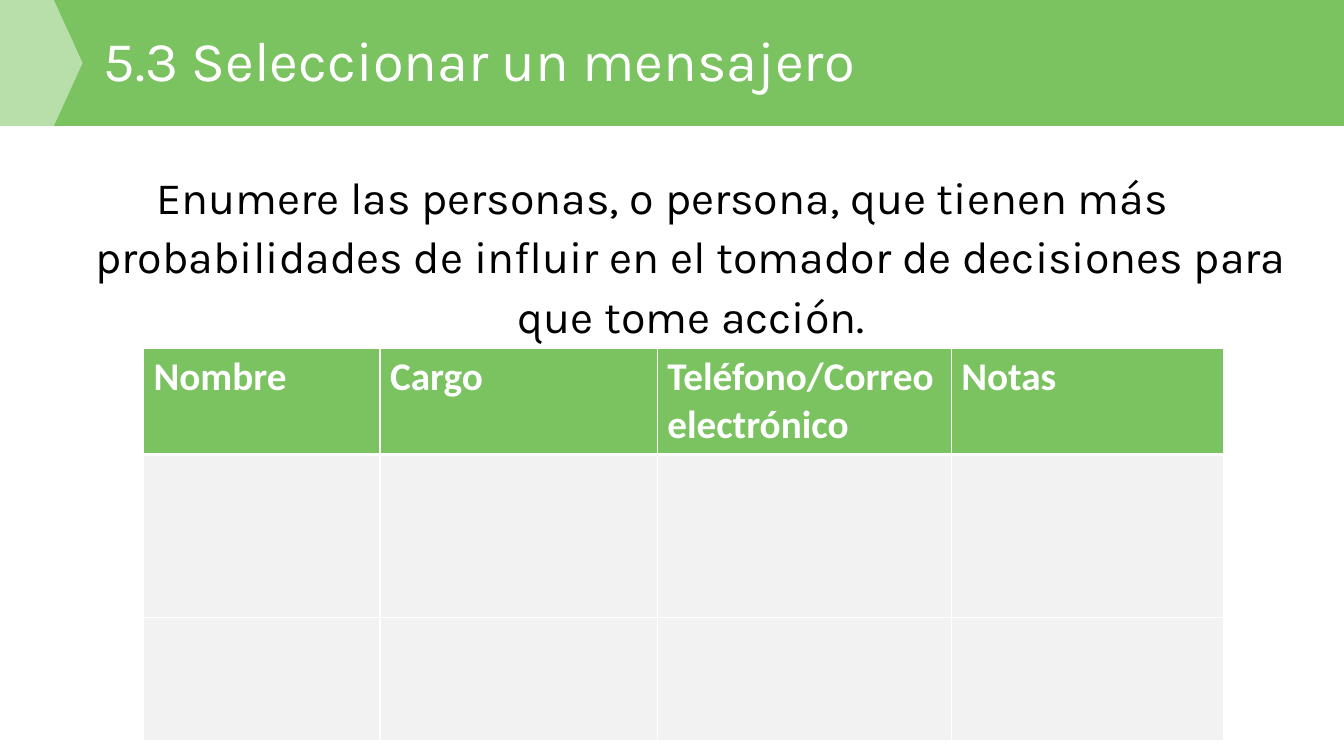
"""Build the slide on selecting a messenger, with an empty contact table."""
from lxml.etree import SubElement
from pptx import Presentation
from pptx.dml.color import RGBColor
from pptx.enum.shapes import MSO_SHAPE
from pptx.enum.text import MSO_ANCHOR, MSO_AUTO_SIZE, PP_ALIGN
from pptx.oxml import parse_xml
from pptx.oxml.ns import nsdecls, qn
from pptx.util import Pt

GREEN = RGBColor(0x7A, 0xC3, 0x60)
WHITE = RGBColor(0xFF, 0xFF, 0xFF)
BLACK = RGBColor(0x00, 0x00, 0x00)
GRAY = RGBColor(0xF2, 0xF2, 0xF2)
HEADERS = ["Nombre", "Cargo", "Teléfono/Correo electrónico", "Notas"]
COL_WIDTHS = [169, 198, 210, 194.5]
ROW_HEIGHTS = [75.6, 116.5, 88]


def set_font(r, name, size, color):
    r.font.name = name
    r.font.size = Pt(size)
    r.font.color.rgb = color


def set_borders(cell, top, bottom):
    tcPr = cell._tc.get_or_add_tcPr()
    sides = [("lnL", 1), ("lnR", 1), ("lnT", top), ("lnB", bottom)]
    for i, (tag, width) in enumerate(sides):
        tcPr.insert(i, parse_xml(
            f'<a:{tag} {nsdecls("a")} w="{Pt(width)}"><a:solidFill>'
            f'<a:srgbClr val="{WHITE}"/></a:solidFill></a:{tag}>'))


prs = Presentation()
prs.slide_width = Pt(960)
prs.slide_height = Pt(540)
s = prs.slides.add_slide(prs.slide_layouts[1])
title, body = s.shapes.title, s.placeholders[1]

band = s.shapes.add_shape(MSO_SHAPE.RECTANGLE, 0, 0, Pt(960), Pt(90))
arrow = s.shapes.add_shape(MSO_SHAPE.PENTAGON, 0, 0, Pt(59), Pt(90))
arrow.adjustments[0] = 0.348
for sp, color in [(band, GREEN), (arrow, WHITE)]:
    sp.shadow.inherit = False
    sp.fill.solid()
    sp.fill.fore_color.rgb = color
    sp.line.fill.background()
    title.element.addprevious(sp.element)
clr = arrow.element.spPr.find(qn("a:solidFill")).find(qn("a:srgbClr"))
SubElement(clr, qn("a:alpha")).set("val", "47000")

title.left, title.top, title.width, title.height = Pt(67), Pt(14.5), Pt(762), Pt(62)
tf = title.text_frame
tf.text = "5.3 Seleccionar un mensajero"
tf.auto_size = MSO_AUTO_SIZE.NONE
tf.vertical_anchor = MSO_ANCHOR.MIDDLE
p = tf.paragraphs[0]
p.alignment = PP_ALIGN.LEFT
p.line_spacing = 0.9
set_font(p.runs[0], "Karla", 40, WHITE)

body.left, body.top, body.width, body.height = Pt(6), Pt(114), Pt(935), Pt(372)
tf = body.text_frame
tf.text = ("Enumere las personas, o persona, que tienen más probabilidades de "
           "influir en el tomador de decisiones para que tome acción.")
tf.auto_size = MSO_AUTO_SIZE.NONE
p = tf.paragraphs[0]
p.alignment = PP_ALIGN.CENTER
p.line_spacing = 1.1
p.space_before = Pt(10)
pPr = p._p.get_or_add_pPr()
pPr.set("marL", str(Pt(40.5)))
pPr.set("indent", str(Pt(-40.5)))
SubElement(pPr, qn("a:buNone"))
set_font(p.runs[0], "Karla", 32, BLACK)

table = s.shapes.add_table(len(ROW_HEIGHTS), len(HEADERS), Pt(102.5), Pt(249),
                           Pt(sum(COL_WIDTHS)), Pt(sum(ROW_HEIGHTS))).table
for col, width in zip(table.columns, COL_WIDTHS):
    col.width = Pt(width)
for i, height in enumerate(ROW_HEIGHTS):
    table.rows[i].height = Pt(height)
    for j, header in enumerate(HEADERS):
        cell = table.cell(i, j)
        cell.fill.solid()
        cell.fill.fore_color.rgb = GRAY if i else GREEN
        set_borders(cell, 3 if i == 1 else 1, 1 if i else 3)
        if i == 0:
            cell.text = header
            r = cell.text_frame.paragraphs[0].runs[0]
            set_font(r, "Calibri", 28, WHITE)
            r.font.bold = True

prs.save("out.pptx")
